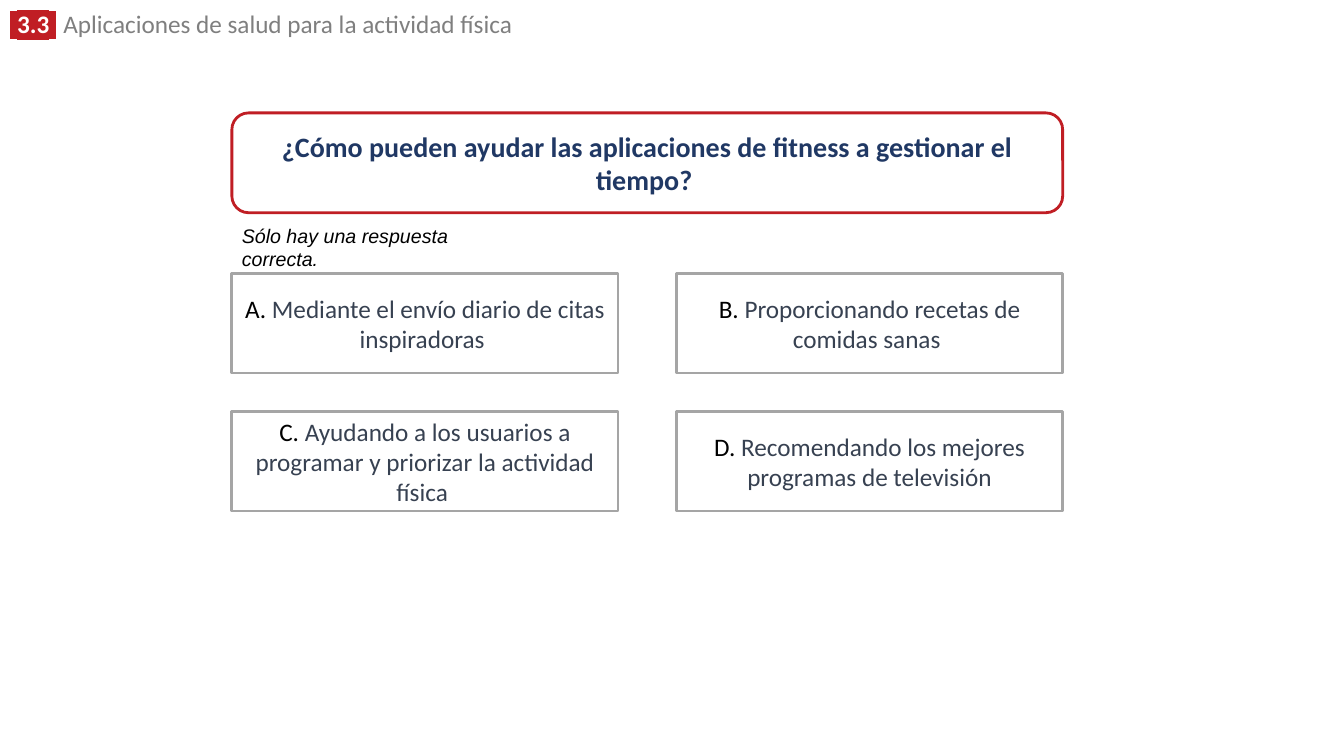
from lxml import etree
from pptx import Presentation
from pptx.dml.color import RGBColor
from pptx.enum.shapes import MSO_SHAPE
from pptx.enum.text import MSO_ANCHOR, MSO_AUTO_SIZE, PP_ALIGN
from pptx.oxml.ns import qn
from pptx.util import Inches, Pt

RECT, ROUNDED = MSO_SHAPE.RECTANGLE, MSO_SHAPE.ROUNDED_RECTANGLE
TOP, MIDDLE = MSO_ANCHOR.TOP, MSO_ANCHOR.MIDDLE
LEFT, CENTER = PP_ALIGN.LEFT, PP_ALIGN.CENTER
FIT_SHAPE = MSO_AUTO_SIZE.SHAPE_TO_FIT_TEXT

COLORS = {
    "white": "FFFFFF", "black": "000000", "red": "C01E24", "navy": "203864",
    "heading": "7F7F7F", "border": "A5A5A5", "answer": "374151",
}


class QuizSlide:
    """Holds the slide and the shared style of its elements."""

    font = "Calibri"
    note_font = "Arial"

    def __init__(self, prs):
        self.slide = prs.slides.add_slide(prs.slide_layouts[5])

    def color(self, name):
        return RGBColor.from_string(COLORS[name])

    def add_run(self, paragraph, text, color):
        run = paragraph.add_run()
        run.text = text
        run.font.color.rgb = self.color(color)
        return run

    def heading(self, number, text, left, top, width, height):
        title = self.slide.shapes.title
        title.left, title.top = Inches(left), Inches(top)
        title.width, title.height = Inches(width), Inches(height)
        frame = title.text_frame
        frame.vertical_anchor = TOP
        frame.auto_size = FIT_SHAPE
        paragraph = frame.paragraphs[0]
        paragraph.alignment = LEFT
        paragraph.line_spacing = 0.8
        paragraph.font.size = Pt(18)
        # Number on a red highlight, then the section name
        for part, font in ((" ", self.note_font), (number, self.font), (" ", self.note_font)):
            run = self.add_run(paragraph, part, "white")
            run.font.bold = True
            run.font.name = font
            fill = run.font._element.find(qn("a:solidFill"))
            highlight = etree.Element(qn("a:highlight"))
            etree.SubElement(highlight, qn("a:srgbClr"), val=COLORS["red"])
            fill.addnext(highlight)
        for part, font in ((" ", self.note_font), (text, self.font)):
            self.add_run(paragraph, part, "heading").font.name = font

    def box(self, kind, left, top, width, height, border, runs, size, bold=False):
        shape = self.slide.shapes.add_shape(
            kind, Inches(left), Inches(top), Inches(width), Inches(height))
        shape.shadow.inherit = False
        shape.fill.solid()
        shape.fill.fore_color.rgb = self.color("white")
        shape.line.color.rgb = self.color(border)
        shape.line.width = Pt(2)
        frame = shape.text_frame
        frame.word_wrap = True
        frame.vertical_anchor = MIDDLE
        paragraph = frame.paragraphs[0]
        paragraph.alignment = CENTER
        paragraph.font.name = self.font
        paragraph.font.size = Pt(size)
        paragraph.font.bold = bold
        for text, color in runs:
            self.add_run(paragraph, text, color)

    def note(self, text, left, top, width, height):
        frame = self.slide.shapes.add_textbox(
            Inches(left), Inches(top), Inches(width), Inches(height)).text_frame
        frame.word_wrap = True
        paragraph = frame.paragraphs[0]
        paragraph.font.name = self.note_font
        paragraph.font.size = Pt(14)
        paragraph.font.italic = True
        self.add_run(paragraph, text, "black")


def main():
    prs = Presentation()
    prs.slide_width, prs.slide_height = Inches(13.33), Inches(7.5)
    quiz = QuizSlide(prs)

    # Section heading
    quiz.heading("3.3", "Aplicaciones de salud para la actividad física", 0, 0.09, 9.52, 0.34)

    # Question and instruction
    left, box_height = 2.3, 0.99
    question = "¿Cómo pueden ayudar las aplicaciones de fitness a gestionar el tiempo? "
    quiz.box(ROUNDED, left, 1.12, 8.24, box_height, "red", [(question, "navy")], 20, bold=True)
    quiz.note("Sólo hay una respuesta correcta.", left, 2.17, 2.36, 0.34)

    # Answers in a grid of two columns
    answers = [
        "Mediante el envío diario de citas inspiradoras ",
        "Proporcionando recetas de comidas sanas ",
        "Ayudando a los usuarios a programar y priorizar la actividad física ",
        "Recomendando los mejores programas de televisión",
    ]
    answers_top, column_step, row_step = 2.71, 4.41, 1.37
    for index, (letter, answer) in enumerate(zip("ABCD", answers)):
        row, column = divmod(index, 2)
        quiz.box(RECT, left + column * column_step, answers_top + row * row_step,
                 3.83, box_height, "border",
                 [(f"{letter}. ", "black"), (answer, "answer")], 18)

    prs.save("out.pptx")


if __name__ == "__main__":
    main()
